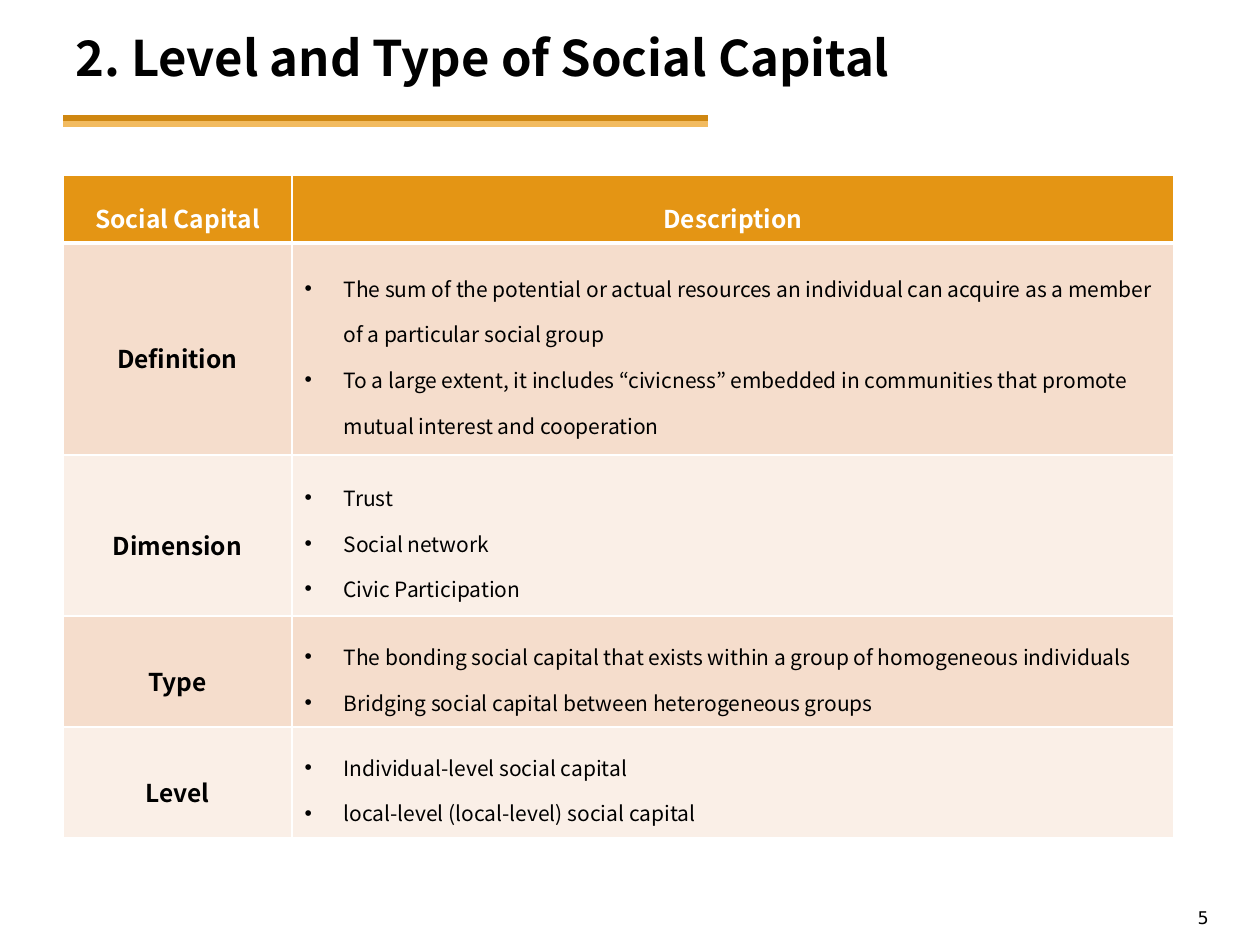
from lxml.etree import SubElement
from pptx import Presentation
from pptx.dml.color import RGBColor as Rgb
from pptx.enum.shapes import MSO_CONNECTOR as Connector
from pptx.enum.text import MSO_ANCHOR as Anchor, PP_ALIGN as Align
from pptx.oxml import parse_xml
from pptx.oxml.ns import nsdecls, qn
from pptx.util import Pt

PX = 914400 // 18 / 7  # 126 px to the inch
COLORS = {
    "black": "000000", "white": "FFFFFF",
    "rule dark": "CF8711", "rule light": "F2BB60",
    "header": "E49514", "band dark": "F5DDCC", "band light": "FAEFE7",
}
HEADING = "Noto Sans CJK KR"


def emu(*lengths):
    return [round(length * PX) for length in lengths]


def write(para, text, color="black", align=Align.LEFT, **font):
    span = para.add_run()
    span.text = text
    para.alignment = align
    for name, value in font.items():
        setattr(span.font, name, value)
    span.font.color.rgb = Rgb.from_string(COLORS[color])


deck = Presentation()
deck.slide_width, deck.slide_height = emu(1260, 945)
page = deck.slides.add_slide(deck.slide_layouts[6])

# Double rule under the title
for y, color in ((118, "rule dark"), (124, "rule light")):
    rule = page.shapes.add_connector(Connector.STRAIGHT, *emu(63, y, 708, y))
    rule.line.color.rgb = Rgb.from_string(COLORS[color])
    rule.line.width = Pt(3)
    SubElement(rule._element.spPr, qn("a:effectLst"))

# Title and page number
texts = [
    ((63, 18, 1197, 78), Anchor.MIDDLE, "2. Level and Type of Social Capital",
     {"name": HEADING, "size": Pt(28), "bold": True}),
    ((927, 901, 294, 34), Anchor.TOP, "5",
     {"name": "DejaVu Sans", "size": Pt(10), "align": Align.RIGHT}),
]
for place, anchor, text, style in texts:
    box = page.shapes.add_textbox(*emu(*place))
    box.text_frame.word_wrap = True
    box.text_frame.vertical_anchor = anchor
    write(box.text_frame.paragraphs[0], text, **style)

# Table content: row height, label, description lines
rows = [
    (68, "Social Capital", ["Description"]),
    (212, "Definition", [
        "The sum of the potential or actual resources an individual can acquire "
        "as a member of a particular social group",
        "To a large extent, it includes “civicness” embedded in communities "
        "that promote mutual interest and cooperation"]),
    (161, "Dimension", ["Trust", "Social network", "Civic Participation"]),
    (111, "Type", [
        "The bonding social capital that exists within a group of homogeneous individuals",
        "Bridging social capital between heterogeneous groups"]),
    (111, "Level", [
        "Individual-level social capital",
        "local-level (local-level) social capital"]),
]
widths = emu(229, 882)
total = sum(height for height, *_ in rows)
table = page.shapes.add_table(len(rows), 2, *emu(63, 175, 1111, total)).table
table.first_row = table.horz_banding = False
for column, width in zip(table.columns, widths):
    column.width = width

for r, (height, label, lines) in enumerate(rows):
    table.rows[r].height = emu(height)[0]
    fill = "header" if r == 0 else ("band light", "band dark")[r % 2]
    for c, content in enumerate(([label], lines)):
        cell = table.cell(r, c)
        cell.vertical_anchor = Anchor.MIDDLE
        cell.fill.solid()
        cell.fill.fore_color.rgb = Rgb.from_string(COLORS[fill])

        # White borders, thicker under the header
        thick = {(0, "B"), (1, "T")}
        for i, side in enumerate("LRTB"):
            weight = Pt(3 if (r, side) in thick else 1)
            cell._tc.get_or_add_tcPr().insert(i, parse_xml(
                f'<a:ln{side} {nsdecls("a")} w="{weight}"><a:solidFill>'
                f'<a:srgbClr val="{COLORS["white"]}"/></a:solidFill></a:ln{side}>'))

        # Centred bold headings, bulleted descriptions
        bulleted = r > 0 and c == 1
        for i, text in enumerate(content):
            frame = cell.text_frame
            para = frame.add_paragraph() if i else frame.paragraphs[0]
            para.line_spacing = 1.5
            write(para, text, "black" if r else "white",
                  Align.LEFT if bulleted else Align.CENTER,
                  name=HEADING, size=Pt(12 if bulleted else 14), bold=not bulleted)
            if bulleted:
                props = para._p.get_or_add_pPr()
                indent = emu(39)[0]
                props.set("marL", str(indent))
                props.set("indent", str(-indent))
                SubElement(props, qn("a:buFont")).set("typeface", "Arial")
                SubElement(props, qn("a:buChar")).set("char", "•")

deck.save("out.pptx")
